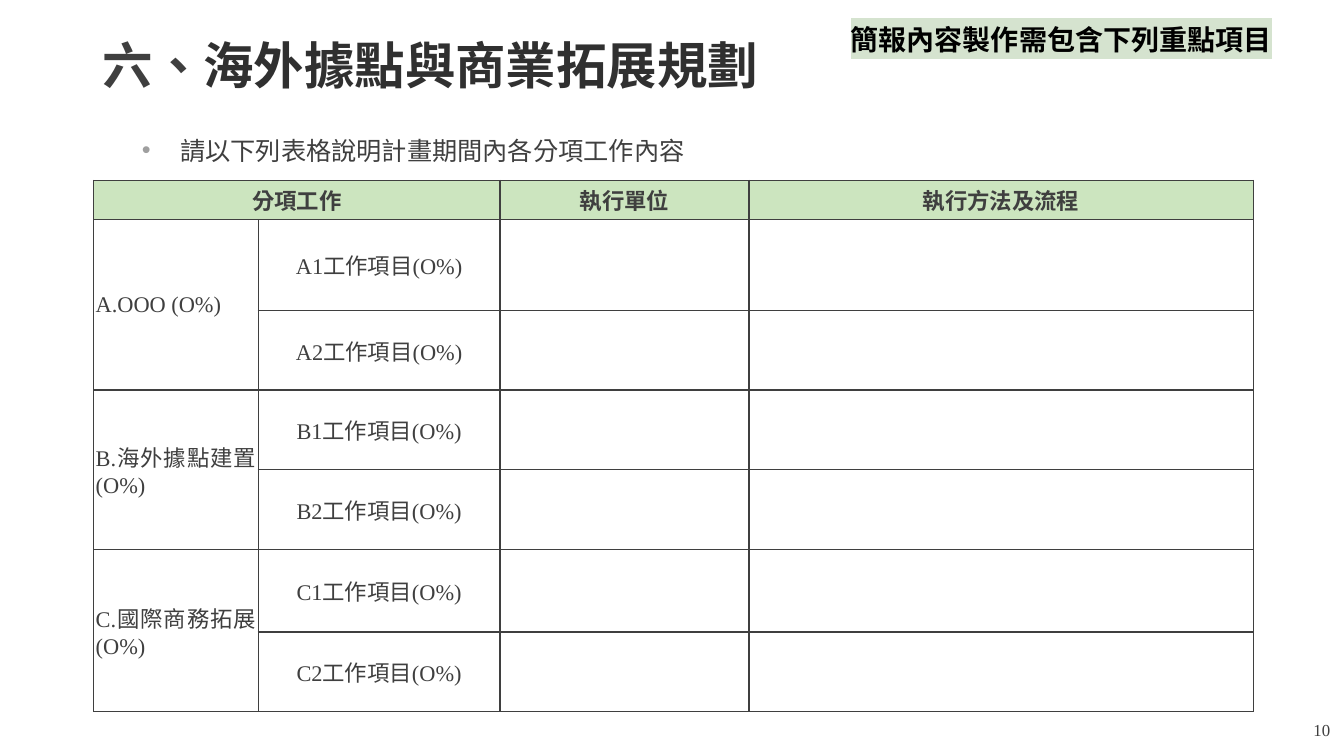
import pptx
import pptx.dml.color
import pptx.enum.text
import pptx.oxml
import pptx.oxml.ns
import pptx.util

W, H = 13.33, 7.5
FONT = "Times New Roman"
COLORS = {
    "text": "3F3F3F",
    "title": "303030",
    "bullet": "9F9F9F",
    "note": "000000",
    "highlight": "D5E3CF",
    "header": "CCE5BF",
    "cell": "FFFFFF",
}
ALIGN = pptx.enum.text.PP_ALIGN
MIDDLE = pptx.enum.text.MSO_ANCHOR.MIDDLE
TOP = pptx.enum.text.MSO_ANCHOR.TOP

LEFT, WIDTH = 0.92, 11.5
COLUMNS = [1.63, 2.4, 2.47, 5]
ROWS = [0.39, 0.9, 0.79, 0.79, 0.79, 0.82, 0.79]
HEADERS = {0: "分項工作", 2: "執行單位", 3: "執行方法及流程"}
TASKS = {"A": "OOO (O%)", "B": "海外據點建置(O%)", "C": "國際商務拓展(O%)"}
ITEMS_PER_TASK = 2


def inches(*values):
    return [pptx.util.Inches(v) for v in values]


def rgb(name):
    return pptx.dml.color.RGBColor.from_string(COLORS[name])


def element(xml):
    tag = xml.split("<", 1)[1].split(" ", 1)[0]
    return pptx.oxml.parse_xml(
        xml.replace(tag, f"{tag} {pptx.oxml.ns.nsdecls('a')}", 1))


def add_run(p, text, size, bold=False, color="text", font=FONT):
    r = p.add_run()
    r.text = text
    r.font.size = pptx.util.Pt(size)
    r.font.bold = bold
    r.font.name = font
    r.font.color.rgb = rgb(color)
    r._r.get_or_add_rPr().set("lang", "zh-TW")
    return r


def add_box(slide, x, y, w, h, align, anchor=MIDDLE):
    sp = slide.shapes.add_textbox(*inches(x, y, w, h))
    tf = sp.text_frame
    tf.word_wrap = True
    tf.vertical_anchor = anchor
    p = tf.paragraphs[0]
    p.alignment = align
    return p


def add_bullet(p, indent, hanging):
    pPr = p._p.get_or_add_pPr()
    left, first = inches(indent, -hanging)
    pPr.set("marL", str(left))
    pPr.set("indent", str(first))
    pPr.append(element(
        f'<a:buClr ><a:srgbClr val="{COLORS["bullet"]}"/></a:buClr>'))
    pPr.append(element('<a:buFont typeface="Arial"/>'))
    pPr.append(element('<a:buChar char="•"/>'))


def highlight(r, color):
    fill = r._r.rPr.find(pptx.oxml.ns.qn("a:solidFill"))
    fill.addnext(element(
        f'<a:highlight ><a:srgbClr val="{COLORS[color]}"/></a:highlight>'))


def style_cell(cell, fill):
    cell.fill.solid()
    cell.fill.fore_color.rgb = rgb(fill)
    cell.vertical_anchor = MIDDLE
    cell.margin_left = cell.margin_right = pptx.util.Inches(0.02)
    cell.margin_top = cell.margin_bottom = 0
    tcPr = cell._tc.get_or_add_tcPr()
    for i, side in enumerate(("lnL", "lnR", "lnT", "lnB")):
        tcPr.insert(i, element(
            f'<a:{side} w="12700"><a:solidFill>'
            f'<a:srgbClr val="{COLORS["text"]}"/></a:solidFill></a:{side}>'))


def write_cell(cell, text, align=ALIGN.CENTER, bold=False):
    p = cell.text_frame.paragraphs[0]
    p.alignment = align
    add_run(p, text, 16, bold)


def add_work_table(slide, x, y):
    frame = slide.shapes.add_table(
        len(ROWS), len(COLUMNS), *inches(x, y, sum(COLUMNS), sum(ROWS)))
    table = frame.table
    for column, width in zip(table.columns, COLUMNS):
        column.width = pptx.util.Inches(width)
    for i, height in enumerate(ROWS):
        table.rows[i].height = pptx.util.Inches(height)
        for cell in table.rows[i].cells:
            style_cell(cell, "cell" if i else "header")
    table.cell(0, 0).merge(table.cell(0, 1))
    for column, text in HEADERS.items():
        write_cell(table.cell(0, column), text, bold=True)
    for i, (letter, name) in enumerate(TASKS.items()):
        top = 1 + i * ITEMS_PER_TASK
        task = table.cell(top, 0)
        task.merge(table.cell(top + ITEMS_PER_TASK - 1, 0))
        write_cell(task, f"{letter}.{name}", ALIGN.JUSTIFY)
        for n in range(ITEMS_PER_TASK):
            write_cell(table.cell(top + n, 1), f"{letter}{n + 1}工作項目(O%)")


def main():
    prs = pptx.Presentation()
    prs.slide_width, prs.slide_height = inches(W, H)
    slide = prs.slides.add_slide(prs.slide_layouts[6])

    p = add_box(slide, W - 0.45, H - 0.42, 0.46, 0.33, ALIGN.CENTER)
    add_run(p, "10", 12)

    p = add_box(slide, LEFT, 0.33, WIDTH, 0.69, ALIGN.JUSTIFY)
    p.line_spacing = 0.9
    add_run(p, "六、", 36, True)
    add_run(p, "海外據點與商業拓展規劃", 36, True, "title", "Karla")

    p = add_box(slide, LEFT, 1.29, WIDTH, 0.5, ALIGN.JUSTIFY, TOP)
    p.space_after = pptx.util.Pt(6)
    add_bullet(p, 0.77, 0.38)
    add_run(p, "請以下列表格說明計畫期間內各分項工作內容", 18)

    p = add_box(slide, 7.83, 0.17, 5.39, 0.44, ALIGN.CENTER)
    highlight(add_run(p, "簡報內容製作需包含下列重點項目", 20, True, "note"), "highlight")

    add_work_table(slide, 0.93, 1.79)
    prs.save("out.pptx")


if __name__ == "__main__":
    main()
